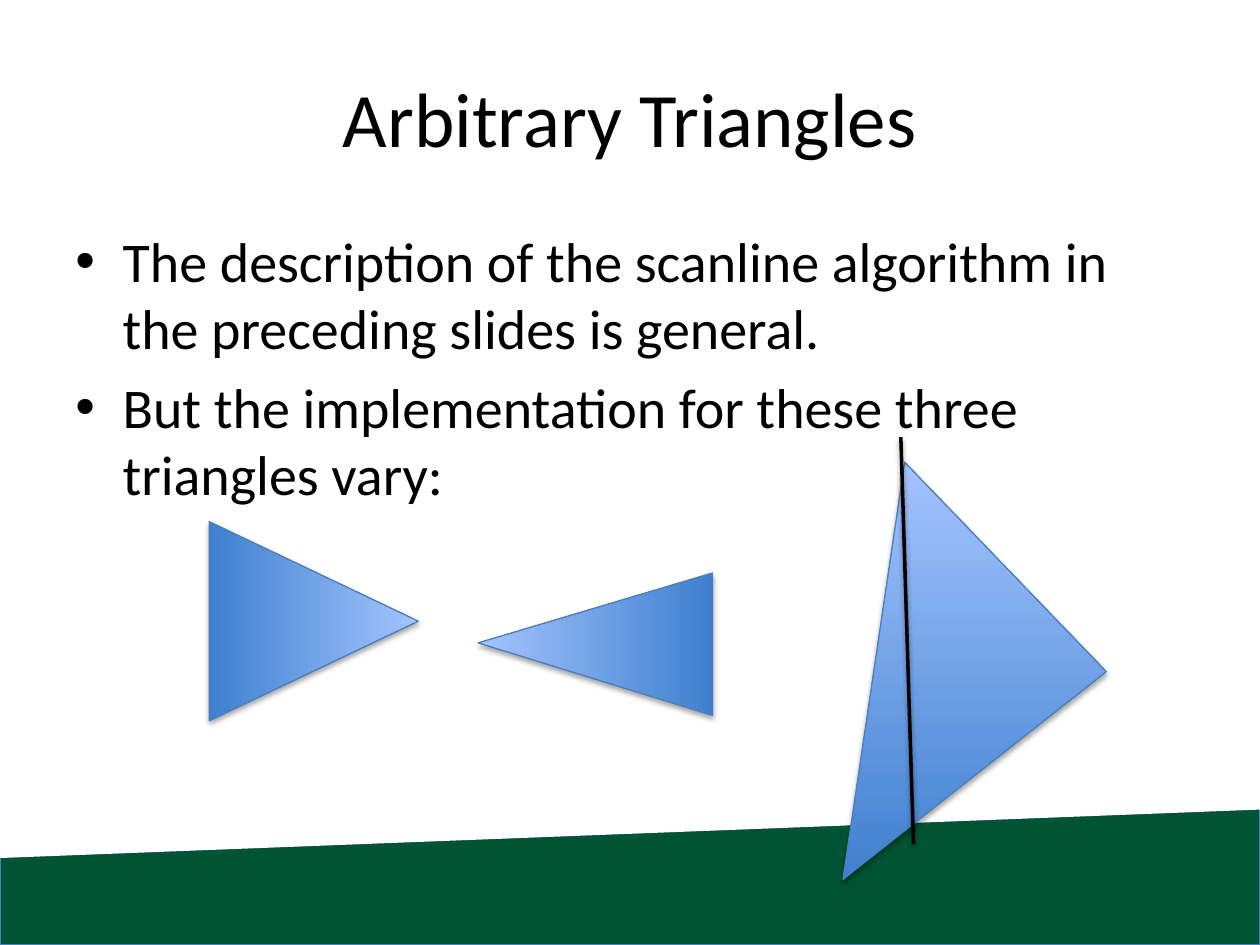
from dataclasses import dataclass

from lxml import etree
from pptx import Presentation
from pptx.dml.color import RGBColor
from pptx.enum.shapes import MSO_CONNECTOR, MSO_SHAPE
from pptx.enum.text import MSO_ANCHOR, PP_ALIGN
from pptx.oxml.ns import qn
from pptx.util import Pt

RECTANGLE = MSO_SHAPE.RECTANGLE
PARALLELOGRAM = MSO_SHAPE.PARALLELOGRAM
TRIANGLE = MSO_SHAPE.ISOSCELES_TRIANGLE
STRAIGHT = MSO_CONNECTOR.STRAIGHT
TOP, MIDDLE = MSO_ANCHOR.TOP, MSO_ANCHOR.MIDDLE
LEFT, CENTER = PP_ALIGN.LEFT, PP_ALIGN.CENTER


@dataclass(frozen=True)
class Theme:
    font: str = "Calibri"
    title_size: float = 44
    body_size: float = 32
    text: str = "000000"
    paper: str = "FFFFFF"
    band: str = "005334"
    outline: str = "4B7EBC"
    gradient: tuple = ("3F80CE", "A4C4FF")


THEME = Theme()


def color(value):
    return RGBColor.from_string(value)


def add_effects(shape, blur=3.1, distance=1.8, opacity=0):
    """Give a shape a downward shadow, or none when opacity is zero."""
    effects = etree.SubElement(shape.element.spPr, qn("a:effectLst"))
    if opacity:
        shadow = etree.SubElement(
            effects, qn("a:outerShdw"), blurRad=str(Pt(blur)),
            dist=str(Pt(distance)), dir="5400000", rotWithShape="0")
        black = etree.SubElement(shadow, qn("a:srgbClr"), val="000000")
        etree.SubElement(black, qn("a:alpha"), val=str(opacity * 1000))


def set_outline(shape, line_color=THEME.outline, width=0.75):
    shape.line.color.rgb = color(line_color)
    shape.line.width = Pt(width)


def style_triangle(shape):
    shape.fill.gradient()
    shape.fill.gradient_angle = 90
    for stop, value in zip(shape.fill.gradient_stops, THEME.gradient):
        stop.color.rgb = color(value)
    for stop, position in zip(shape.fill.gradient_stops, (0, 1)):
        stop.position = position
    set_outline(shape)
    add_effects(shape, opacity=35)


def add_preset(slide, kind, box, rotation=0, flip=None, adjustment=None):
    shape = slide.shapes.add_shape(kind, *map(Pt, box))
    shape.rotation = rotation
    if flip:
        shape.element.spPr.get_or_add_xfrm().set(flip, "1")
    if adjustment is not None:
        shape.adjustments[0] = adjustment
    return shape


def add_backdrop(slide):
    """Draw the green band, with its top cut on a slant by a white shape."""
    band = add_preset(slide, RECTANGLE, (0, 403.92, 720, 136.08))
    band.fill.solid()
    band.fill.fore_color.rgb = color(THEME.band)
    set_outline(band)
    add_effects(band, opacity=35)

    slant = add_preset(slide, PARALLELOGRAM, (276.5, 46.8, 167, 720),
                       rotation=90, flip="flipH", adjustment=0.166)
    slant.fill.solid()
    slant.fill.fore_color.rgb = color(THEME.paper)
    slant.line.fill.background()
    add_effects(slant)


def add_bullet(paragraph, indent):
    properties = paragraph._p.get_or_add_pPr()
    properties.set("marL", str(Pt(indent)))
    properties.set("indent", str(-Pt(indent)))
    etree.SubElement(properties, qn("a:buFont"), typeface="Arial")
    etree.SubElement(properties, qn("a:buChar"), char="•")


def add_text(slide, lines, box, size, align=LEFT, anchor=TOP,
             bullet_indent=0, gap=0):
    frame = slide.shapes.add_textbox(*map(Pt, box)).text_frame
    frame.word_wrap = True
    frame.vertical_anchor = anchor
    for index, line in enumerate(lines):
        paragraph = frame.add_paragraph() if index else frame.paragraphs[0]
        if bullet_indent:
            add_bullet(paragraph, bullet_indent)
        paragraph.alignment = align
        paragraph.space_before = Pt(gap if index else 0)
        run = paragraph.add_run()
        run.text = line
        run.font.name = THEME.font
        run.font.size = Pt(size)
        run.font.color.rgb = color(THEME.text)


def add_free_triangle(slide, corners):
    start, *others = [(Pt(x), Pt(y)) for x, y in corners]
    builder = slide.shapes.build_freeform(*start)
    builder.add_line_segments(others, close=True)
    style_triangle(builder.convert_to_shape())


def add_line(slide, start, end):
    line = slide.shapes.add_connector(STRAIGHT, *map(Pt, (*start, *end)))
    set_outline(line, THEME.text, 2)
    add_effects(line, distance=1.6, opacity=38)


def main():
    presentation = Presentation()
    presentation.slide_width, presentation.slide_height = Pt(720), Pt(540)
    slide = presentation.slides.add_slide(presentation.slide_layouts[6])

    add_backdrop(slide)
    add_text(slide, ["Arbitrary Triangles"], (36, 21.6, 648, 90),
             THEME.title_size, align=CENTER, anchor=MIDDLE)
    add_text(slide, [
        "The description of the scanline algorithm in the preceding slides is general.",
        "But the implementation for these three triangles vary:",
    ], (36, 126, 648, 356.4), THEME.body_size, bullet_indent=27, gap=6.4)

    style_triangle(add_preset(slide, TRIANGLE, (122.4, 295.2, 113.8, 119.5),
                              rotation=90))
    style_triangle(add_preset(slide, TRIANGLE, (299.5, 301.2, 81.4, 133.9),
                              rotation=90, flip="flipV", adjustment=0.491))
    add_free_triangle(slide, [(517, 264.2), (632.2, 383.8), (481.7, 502.6)])
    add_line(slide, (522, 482.4), (514.8, 249.8))

    presentation.save("out.pptx")


if __name__ == "__main__":
    main()
